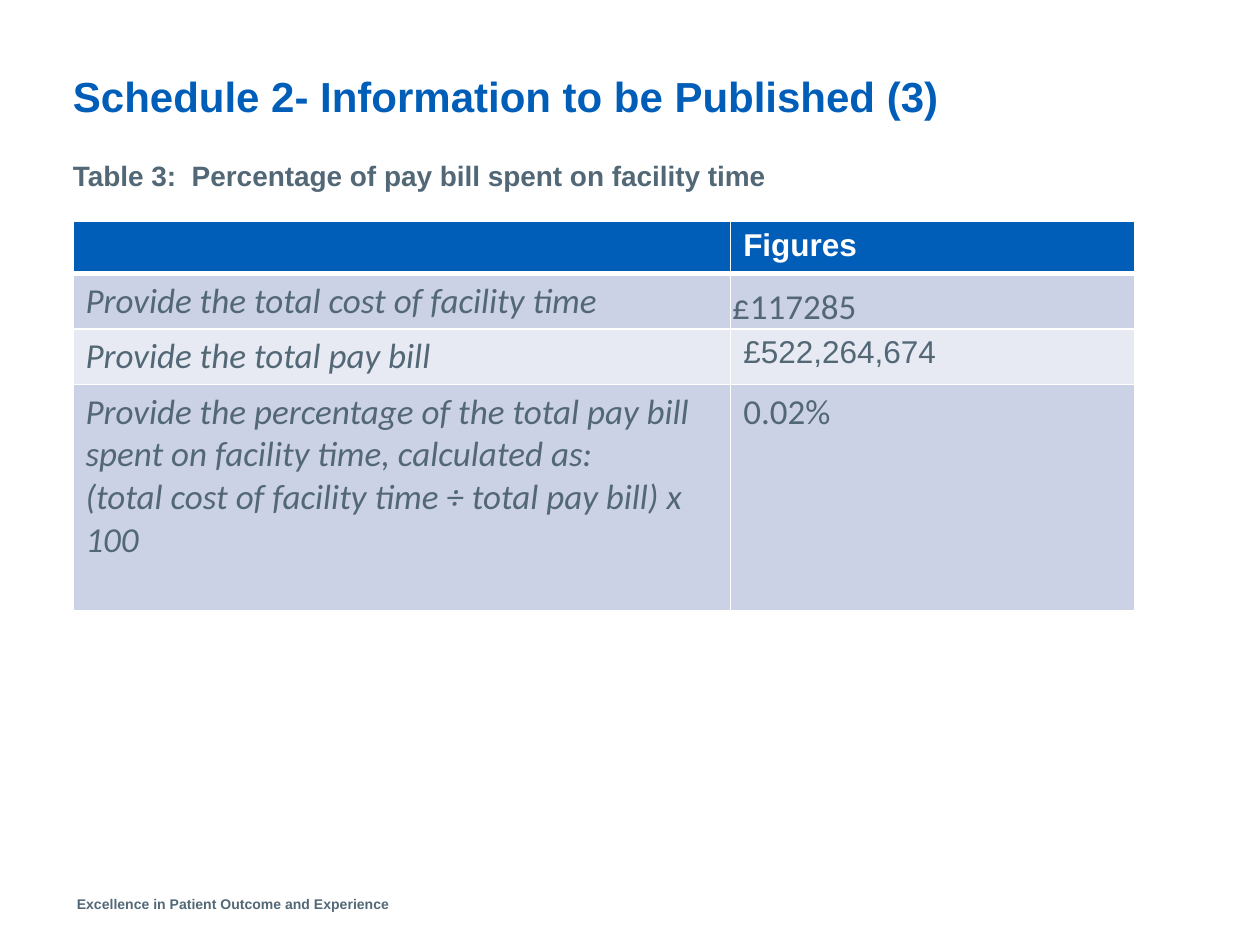
from pptx import Presentation
from pptx.dml.color import RGBColor as RGB
from pptx.enum.text import MSO_ANCHOR as ANCHOR, MSO_AUTO_SIZE as AUTO, PP_ALIGN as ALIGN
from pptx.oxml.ns import qn
from pptx.util import Cm, Pt
from lxml.etree import SubElement

COLORS = {"blue": "005EB8", "slate": "536876", "white": "FFFFFF",
          "band": "CCD2E6", "pale": "E7EAF3"}

TITLE = "Schedule 2- Information to be Published (3)"
CAPTION = "Table 3:  Percentage of pay bill spent on facility time"
FOOTER = "Excellence in Patient Outcome and Experience"

HEADER = ["", "Figures"]
ROWS = [
    ("Provide the total cost of facility time", "£117285"),
    ("Provide the total pay bill", "£522,264,674"),
    ("Provide the percentage of the total pay bill spent on facility time, calculated as:\n"
     "(total cost of facility time ÷ total pay bill) x 100", "0.02%"),
]
LEFT = Cm(1.47)
COL_WIDTHS = [13.26, 8.15]
ROW_HEIGHTS = [1.04, 1.12, 1.12, 4.57]


def write(tf, text, size=20, font="Calibri", color="slate", bold=False, italic=False,
          spacing=None):
    """Fill a text frame, one left-aligned paragraph without bullet per line."""
    for i, line in enumerate(text.split("\n")):
        p = tf.paragraphs[0] if i == 0 else tf.add_paragraph()
        p.alignment = ALIGN.LEFT
        p.space_before = Pt(0)
        if spacing:
            p.line_spacing = spacing
        pPr = p._p.get_or_add_pPr()
        pPr.set("marL", "0")
        pPr.set("indent", "0")
        SubElement(pPr, qn("a:buNone"))
        r = p.add_run()
        r.text = line
        r.font.size, r.font.name = Pt(size), font
        r.font.bold, r.font.italic = bold, italic
        r.font.color.rgb = RGB.from_string(COLORS[color])


def place(sp, left, top, width, height, anchor=ANCHOR.TOP):
    """Move a placeholder, take away its insets and return its text frame."""
    sp.left, sp.top, sp.width, sp.height = left, top, width, height
    tf = sp.text_frame
    tf.margin_left = tf.margin_top = tf.margin_right = tf.margin_bottom = 0
    tf.word_wrap, tf.auto_size, tf.vertical_anchor = True, AUTO.NONE, anchor
    return tf


def paint(cell, fill, bottom=1):
    """Give a cell white borders, then its fill, as the schema orders them."""
    tcPr = cell._tc.get_or_add_tcPr()
    for side, width in (("L", 1), ("R", 1), ("T", 1), ("B", bottom)):
        ln = SubElement(tcPr, qn(f"a:ln{side}"), w=str(Pt(width)))
        SubElement(SubElement(ln, qn("a:solidFill")), qn("a:srgbClr"), val=COLORS["white"])
    cell.fill.solid()
    cell.fill.fore_color.rgb = RGB.from_string(COLORS[fill])


prs = Presentation()
prs.slide_width, prs.slide_height = Cm(25.4), Cm(19.05)
s = prs.slides.add_slide(prs.slide_layouts[1])

tf = place(s.shapes.title, LEFT, Cm(1.32), Cm(22.17), Cm(1.14), ANCHOR.BOTTOM)
write(tf, TITLE, size=24, font="Arial", color="blue", bold=True, spacing=0.9)
tf = place(s.placeholders[1], LEFT, Cm(3.12), Cm(21.41), Cm(10.21))
write(tf, CAPTION, size=16, font="Arial", bold=True, spacing=1.1)

footer = s.shapes.add_textbox(Cm(1.3), Cm(17.93), Cm(10.21), Cm(0.61))
footer.text_frame.word_wrap = True
write(footer.text_frame, FOOTER, size=8, font="Arial", bold=True)

table = s.shapes.add_table(len(ROWS) + 1, len(HEADER), LEFT, Cm(4.47),
                           Cm(sum(COL_WIDTHS)), Cm(sum(ROW_HEIGHTS))).table
for col, width in zip(table.columns, COL_WIDTHS):
    col.width = Cm(width)
for row, height in zip(table.rows, ROW_HEIGHTS):
    row.height = Cm(height)

for j, text in enumerate(HEADER):
    cell = table.cell(0, j)
    paint(cell, "blue", bottom=3)
    if text:
        write(cell.text_frame, text, size=18, font="Arial", color="white", bold=True)

for i, (label, figure) in enumerate(ROWS, 1):
    for j, text in enumerate((label, figure)):
        cell = table.cell(i, j)
        paint(cell, "band" if i % 2 else "pale")
        style = {"size": 18, "font": "Arial"} if (i, j) == (2, 1) else {"italic": j == 0}
        write(cell.text_frame, text, **style)

total_cost = table.cell(1, 1)
total_cost.vertical_anchor = ANCHOR.BOTTOM
total_cost.margin_left = total_cost.margin_top = total_cost.margin_right = Cm(0.03)
total_cost.margin_bottom = 0

prs.save("out.pptx")
